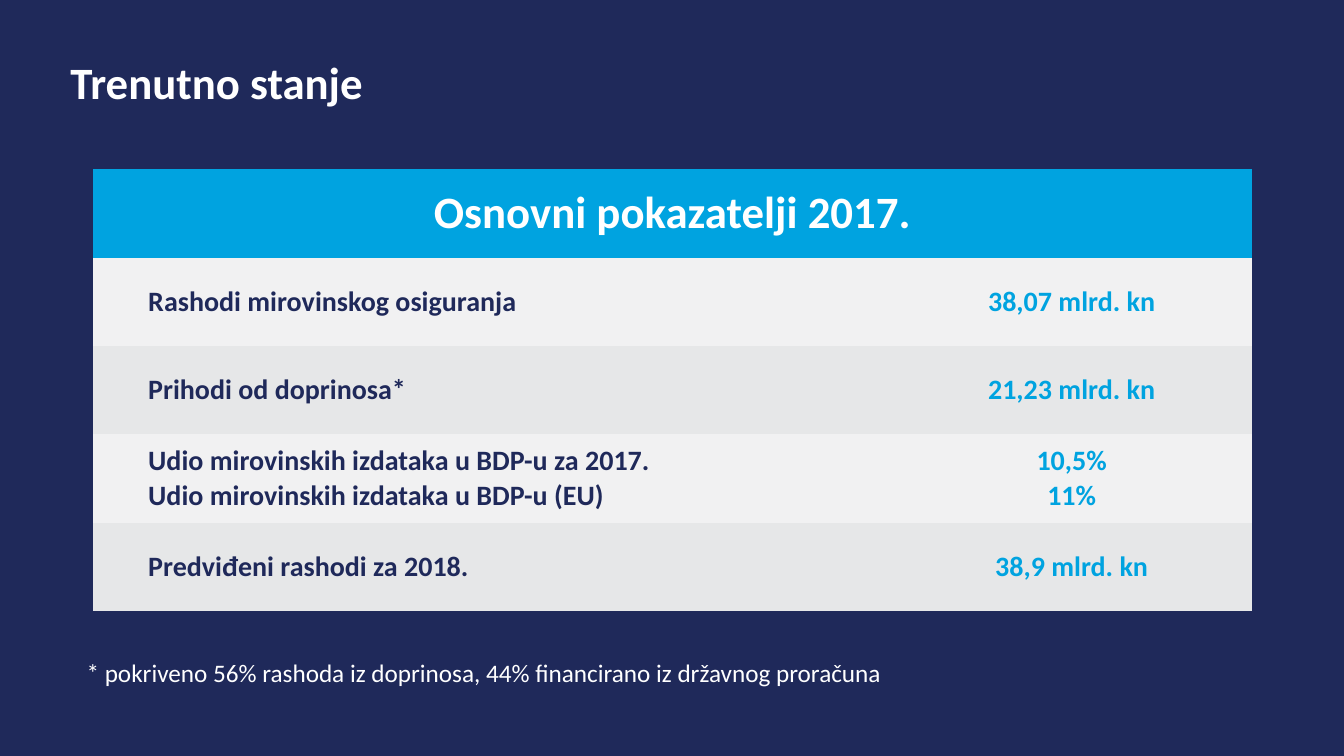
from pptx import Presentation
from pptx.dml.color import RGBColor
from pptx.enum.text import MSO_ANCHOR, PP_ALIGN
from pptx.util import Inches, Pt

TITLE = "Trenutno stanje"
HEADING = "Osnovni pokazatelji 2017."
INDICATORS = [
    (["Rashodi mirovinskog osiguranja"], ["38,07 mlrd. kn"]),
    (["Prihodi od doprinosa*"], ["21,23 mlrd. kn"]),
    (["Udio mirovinskih izdataka u BDP-u za 2017.",
      "Udio mirovinskih izdataka u BDP-u (EU)"], ["10,5%", "11%"]),
    (["Predviđeni rashodi za 2018."], ["38,9 mlrd. kn"]),
]
FOOTNOTE = "* pokriveno 56% rashoda iz doprinosa, 44% financirano iz državnog proračuna"

COLORS = {"navy": "1F295A", "blue": "00A3E0", "white": "FFFFFF",
          "light": "F1F1F2", "grey": "E6E7E8"}
FONT = "Calibri"
SLIDE_W, SLIDE_H = 13.33, 7.5
COLUMNS = (7.92, 3.58)
ROW_H = 0.876
TABLE_LEFT, TABLE_TOP = 0.92, 1.68
LABEL_INDENT = 0.55
NO_STYLE = "{2D5ABB26-0587-4C30-8999-92F81FD0307C}"


def color(name):
    return RGBColor.from_string(COLORS[name])


def write(tf, lines, size=20, fill="white", bold=True, align=PP_ALIGN.LEFT, spacing=None):
    for i, line in enumerate(lines):
        p = tf.paragraphs[0] if i == 0 else tf.add_paragraph()
        p.alignment = align
        p.line_spacing = spacing
        r = p.add_run()
        r.text = line
        r.font.name, r.font.size, r.font.bold = FONT, Pt(size), bold
        r.font.color.rgb = color(fill)


def add_text(s, box, lines, anchor=MSO_ANCHOR.TOP, **style):
    tf = s.shapes.add_textbox(*map(Inches, box)).text_frame
    tf.word_wrap = True
    tf.vertical_anchor = anchor
    write(tf, lines, **style)


def fill_cell(cell, lines, background, **style):
    cell.fill.solid()
    cell.fill.fore_color.rgb = color(background)
    cell.vertical_anchor = MSO_ANCHOR.MIDDLE
    write(cell.text_frame, lines, **style)


def add_indicators(s):
    n_rows = len(INDICATORS) + 1
    frame = s.shapes.add_table(n_rows, len(COLUMNS), Inches(TABLE_LEFT), Inches(TABLE_TOP),
                               Inches(sum(COLUMNS)), Inches(n_rows * ROW_H))
    table = frame.table
    table._tbl.tblPr.find("{*}tableStyleId").text = NO_STYLE
    table.horz_banding = False
    for column, width in zip(table.columns, COLUMNS):
        column.width = Inches(width)
    for row in table.rows:
        row.height = Inches(ROW_H)

    heading = table.cell(0, 0)
    heading.merge(table.cell(0, len(COLUMNS) - 1))
    fill_cell(heading, [HEADING], "blue", size=32, align=PP_ALIGN.CENTER)
    for i, (labels, values) in enumerate(INDICATORS, start=1):
        band = "light" if i % 2 else "grey"
        label = table.cell(i, 0)
        label.margin_left = Inches(LABEL_INDENT)
        fill_cell(label, labels, band, fill="navy")
        fill_cell(table.cell(i, 1), values, band, fill="blue", align=PP_ALIGN.CENTER)


def main():
    prs = Presentation()
    prs.slide_width, prs.slide_height = Inches(SLIDE_W), Inches(SLIDE_H)
    s = prs.slides.add_slide(prs.slide_layouts[6])
    s.background.fill.solid()
    s.background.fill.fore_color.rgb = color("navy")
    add_indicators(s)
    add_text(s, (0.76, 6.47, 9.28, 0.4), [FOOTNOTE], size=18, bold=False)
    add_text(s, (0.6, 0.4, 11.5, 0.89), [TITLE], anchor=MSO_ANCHOR.MIDDLE,
             size=32, spacing=0.9)
    prs.save("out.pptx")


if __name__ == "__main__":
    main()
